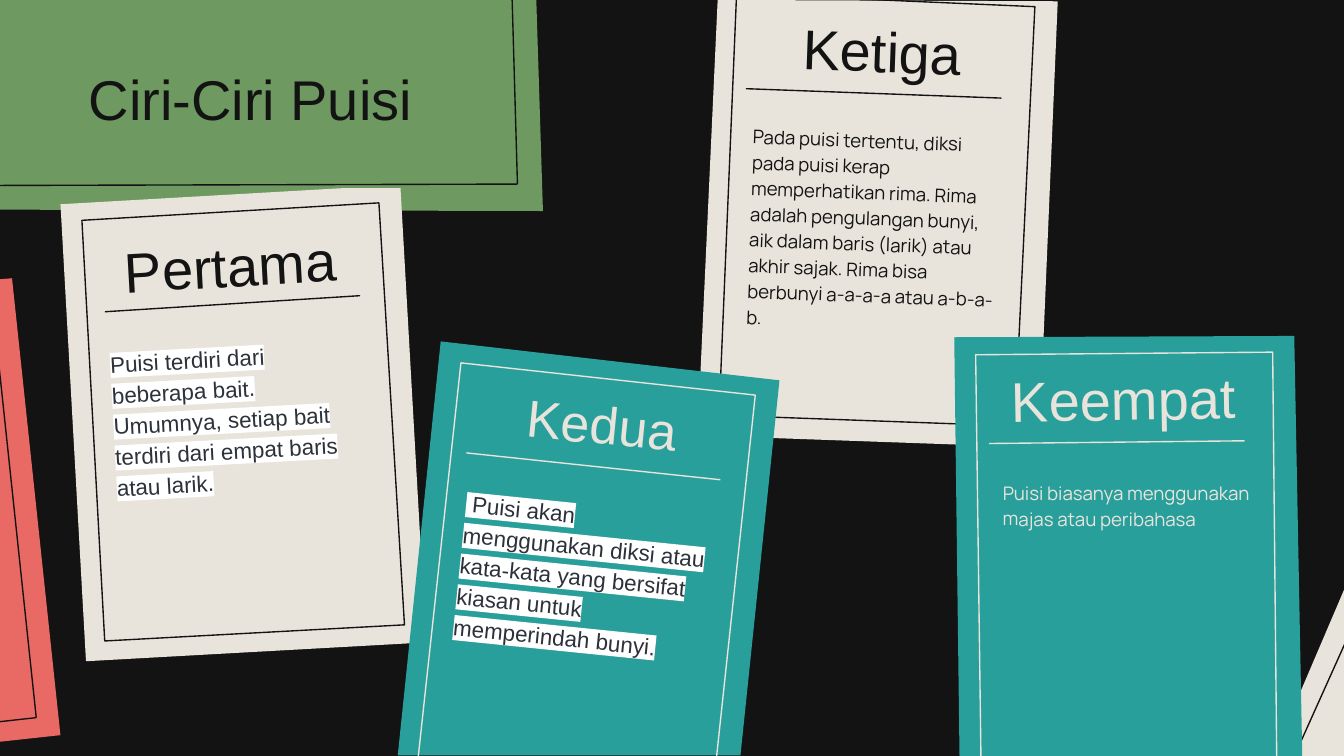
"""Build a slide of tilted paper cards on the traits of poetry."""
from dataclasses import dataclass

from lxml.etree import SubElement
from pptx import Presentation
from pptx.dml.color import RGBColor
from pptx.enum.shapes import MSO_CONNECTOR as Connector
from pptx.enum.text import MSO_ANCHOR as Anchor, MSO_AUTO_SIZE as AutoSize, PP_ALIGN as Align
from pptx.oxml import parse_xml
from pptx.oxml.ns import nsdecls, qn
from pptx.util import Inches, Pt

BLACK = RGBColor(0x13, 0x13, 0x13)
CREAM = RGBColor(0xE9, 0xE4, 0xDB)
GREEN = RGBColor(0x6E, 0x99, 0x60)
TEAL = RGBColor(0x29, 0x9F, 0x9C)
CORAL = RGBColor(0xE9, 0x6A, 0x64)
SLATE = RGBColor(0x2C, 0x31, 0x3A)
COLUMNS, ROWS = 100, 56.25
COMPARISON_LAYOUT = 4


@dataclass
class Card:
    """A sheet with a frame, a ruled heading and a body, in grid cells."""
    heading: str
    body: str
    sheet: list
    frame: list
    rule: list
    paper: RGBColor
    ink: RGBColor
    heading_box: tuple
    heading_angle: float
    body_box: tuple
    body_angle: float
    marked: bool = False
    heading_size: float = 30
    heading_spacing: float = 0.8
    before: float = 0
    after: float = 0


CARDS = [
    Card("Ketiga",
         "Pada puisi tertentu, diksi pada puisi kerap memperhatikan rima. Rima adalah "
         "pengulangan bunyi, aik dalam baris (larik) atau akhir sajak. Rima bisa "
         "berbunyi a-a-a-a atau a-b-a-b.",
         [(53.4, 0), (51.9, 32.4), (77.3, 33.3), (78.7, 0.1)],
         [(54.8, -0.3), (53.5, 30.9), (75.5, 31.7), (77, 0.5), (58.7, -0.3)],
         [(55.5, 6.6), (74.5, 7.3)], CREAM, BLACK,
         (54.9, 1.2, 21.5, 6), 2.1, (54.8, 8.4, 20.7, 16.3), 2.1,
         before=10, after=10),
    Card("Pertama",
         "Puisi terdiri dari beberapa bait. Umumnya, setiap bait terdiri dari empat "
         "baris atau larik.",
         [(29.8, 14), (31.7, 47.8), (6.4, 49.2), (4.5, 15.2), (25.5, 14)],
         [(6.1, 16.4), (7.8, 47.7), (30.1, 46.5), (28.2, 15.1)],
         [(7.8, 23.2), (26.8, 22)], CREAM, BLACK,
         (6.8, 16.2, 20.7, 7.1), 356.8, (7.5, 24.3, 20.7, 16.3), 356.9,
         marked=True, heading_spacing=1, after=10),
    Card("Kedua",
         " Puisi akan menggunakan diksi atau kata-kata yang bersifat kiasan untuk "
         "memperindah bunyi.",
         [(32.8, 25.4), (29.6, 56.2), (55.1, 56.2), (58, 28.3)],
         [(31.1, 56.5), (34.3, 27), (56.2, 29.4), (53.3, 56.5)],
         [(34.7, 33.7), (53.6, 35.7)], TEAL, CREAM,
         (34.1, 29.1, 21.3, 6), 5.8, (33.2, 36.1, 20.7, 13.3), 5.9,
         marked=True, heading_size=27.8, after=12),
    Card("Keempat", "Puisi biasanya menggunakan majas atau peribahasa",
         [(71, 25.1), (71.4, 56.7), (96.9, 56.7), (96.3, 25)],
         [(73, 56.7), (72.6, 26.4), (94.7, 26.2), (95, 56.6)],
         [(73.6, 33), (92.6, 32.8)], TEAL, CREAM,
         (73.1, 27.1, 21, 6), 359, (73.6, 34.6, 20.7, 16.3), 0.1,
         before=10),
]


def cells(count):
    """Turn grid cells into a length; a cell is a tenth of an inch."""
    return Inches(count / 10)


def add_outline(page, points, fill=None, line=None):
    """Draw a closed polygon with a fill or a thin line."""
    corners = [(cells(x), cells(y)) for x, y in points]
    builder = page.shapes.build_freeform(*corners[0])
    builder.add_line_segments(corners[1:], close=True)
    shape = builder.convert_to_shape()
    shape.shadow.inherit = False
    if fill is None:
        shape.fill.background()
        shape.line.color.rgb = line
        shape.line.width = Pt(0.75)
    else:
        shape.fill.solid()
        shape.fill.fore_color.rgb = fill
        shape.line.fill.background()


def add_rules(page, points, color):
    """Join successive points with thin straight lines."""
    for start, end in zip(points, points[1:]):
        rule = page.shapes.add_connector(
            Connector.STRAIGHT, *(cells(n) for n in (*start, *end)))
        rule.line.color.rgb = color
        rule.line.width = Pt(0.75)
        SubElement(rule.element.spPr, qn("a:effectLst"))


def place(box, bounds, angle=0):
    """Move a box to its grid place and bring it to the front."""
    box.left, box.top, box.width, box.height = map(cells, bounds)
    box.rotation = angle
    box.element.getparent().append(box.element)


def write(box, text, size, font, color, spacing, align=Align.LEFT,
          anchor=Anchor.TOP, before=0, after=0):
    """Set one paragraph of text and return its span."""
    frame = box.text_frame
    frame.text = text
    frame.word_wrap = True
    frame.auto_size = AutoSize.NONE
    frame.vertical_anchor = anchor
    frame.margin_left = frame.margin_right = cells(1)
    frame.margin_top = frame.margin_bottom = cells(1)
    para = frame.paragraphs[0]
    para.alignment, para.line_spacing = align, spacing
    para.space_before, para.space_after = Pt(before), Pt(after)
    span = para.runs[0]
    span.font.size, span.font.name, span.font.bold = Pt(size), font, False
    span.font.color.rgb = color
    return span


def remove_bullet(para):
    """Drop the bullet and the hanging indent of a paragraph."""
    properties = para._p.get_or_add_pPr()
    properties.set("marL", "0")
    properties.set("indent", "0")
    SubElement(properties, qn("a:buNone"))


def highlight(span):
    """Lay a white marker behind a span."""
    marker = parse_xml(
        f'<a:highlight {nsdecls("a")}><a:srgbClr val="FFFFFF"/></a:highlight>')
    span.font._element.find(qn("a:solidFill")).addnext(marker)


def add_card(page, card):
    """Draw the paper, frame and heading rule of a card."""
    add_outline(page, card.sheet, fill=card.paper)
    add_outline(page, card.frame, line=card.ink)
    add_rules(page, card.rule, card.ink)


def add_card_text(page, card, box):
    """Write the body of a card in its placeholder, and the heading above."""
    place(box, card.body_box, card.body_angle)
    size, font, color = (12, "Arial", SLATE) if card.marked else (10, "Manrope", card.ink)
    span = write(box, card.body, size, font, color, 1.15,
                 before=card.before, after=card.after)
    remove_bullet(box.text_frame.paragraphs[0])
    if card.marked:
        highlight(span)
    heading = page.shapes.add_textbox(*map(cells, card.heading_box))
    heading.rotation = card.heading_angle
    write(heading, card.heading, card.heading_size, "Arial", card.ink,
          card.heading_spacing, Align.CENTER)


def main():
    """Assemble and save the slide."""
    deck = Presentation()
    deck.slide_width, deck.slide_height = cells(COLUMNS), cells(ROWS)
    page = deck.slides.add_slide(deck.slide_layouts[COMPARISON_LAYOUT])
    page.background.fill.solid()
    page.background.fill.fore_color.rgb = BLACK
    title, *bodies = page.placeholders

    add_outline(page, [(100.3, 43.2), (100.3, 56.3), (94.7, 56.3)], fill=CREAM)
    add_rules(page, [(100.2, 47.6), (96.2, 56.5)], BLACK)
    add_outline(page, [(39.9, -0.2), (40.4, 15.7), (-0.4, 15.6), (-0.2, -0.1)], fill=GREEN)
    add_rules(page, [(38.1, -0.3), (38.5, 13.7), (-0.2, 13.8)], BLACK)
    for card in CARDS:
        add_card(page, card)
    add_outline(page, [(-0.2, 20.8), (0.9, 20.7), (4.5, 54.7), (-0.1, 55.2)], fill=CORAL)
    add_rules(page, [(-0.1, 27), (2.7, 53.4), (0, 53.7)], BLACK)

    place(title, (5.6, 4.1, 30.6, 7.1))
    write(title, "Ciri-Ciri Puisi", 30, "Arial", BLACK, 0.9, anchor=Anchor.MIDDLE)
    for card, box in zip(CARDS, bodies):
        add_card_text(page, card, box)
    deck.save("out.pptx")


if __name__ == "__main__":
    main()
